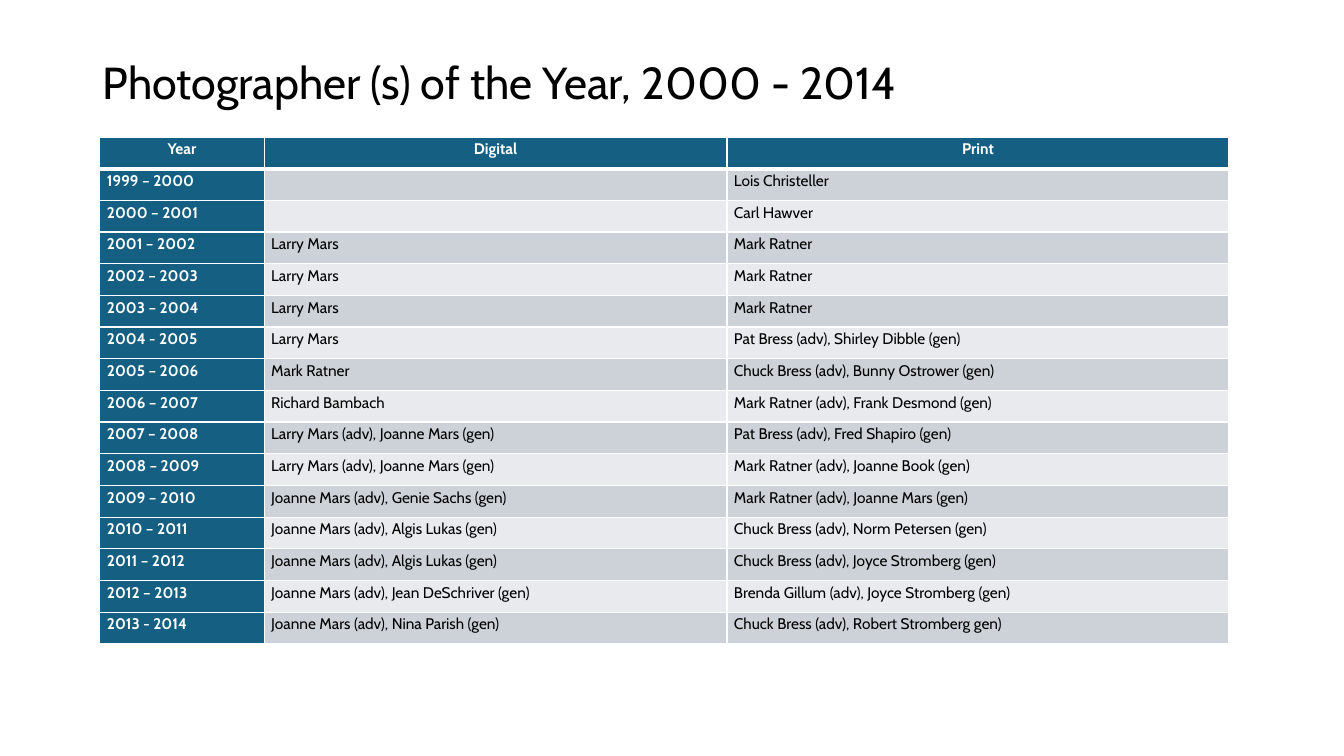
import pptx
import pptx.dml.color
import pptx.enum.text
import pptx.oxml.ns
import pptx.util
from lxml import etree

Inches = pptx.util.Inches
Pt = pptx.util.Pt
ALIGN = pptx.enum.text.PP_ALIGN
ANCHOR = pptx.enum.text.MSO_ANCHOR
qn = pptx.oxml.ns.qn

COLORS = {
    "text": "000000",
    "light": "FFFFFF",
    "header": "156082",
    "odd": "CCD2D8",
    "even": "E8EAED",
}

TITLE = "Photographer (s) of the Year, 2000 - 2014"
HEADINGS = ("Year", "Digital", "Print")
WINNERS = [
    ("1999 – 2000", "", "Lois Christeller"),
    ("2000 – 2001", "", "Carl Hawver"),
    ("2001 – 2002", "Larry Mars", "Mark Ratner"),
    ("2002 – 2003", "Larry Mars", "Mark Ratner"),
    ("2003 – 2004", "Larry Mars", "Mark Ratner"),
    ("2004 - 2005", "Larry Mars", "Pat Bress (adv), Shirley Dibble (gen)"),
    ("2005 – 2006", "Mark Ratner", "Chuck Bress (adv), Bunny Ostrower (gen)"),
    ("2006 – 2007", "Richard Bambach", "Mark Ratner (adv), Frank Desmond (gen)"),
    ("2007 – 2008", "Larry Mars (adv), Joanne Mars (gen)", "Pat Bress (adv), Fred Shapiro (gen)"),
    ("2008 – 2009", "Larry Mars (adv), Joanne Mars (gen)", "Mark Ratner (adv), Joanne Book (gen)"),
    ("2009 – 2010", "Joanne Mars (adv), Genie Sachs (gen)", "Mark Ratner (adv), Joanne Mars (gen)"),
    ("2010 – 2011", "Joanne Mars (adv), Algis Lukas (gen)", "Chuck Bress (adv), Norm Petersen (gen)"),
    ("2011 – 2012", "Joanne Mars (adv), Algis Lukas (gen)", "Chuck Bress (adv), Joyce Stromberg (gen)"),
    ("2012 – 2013", "Joanne Mars (adv), Jean DeSchriver (gen)", "Brenda Gillum (adv), Joyce Stromberg (gen)"),
    ("2013 - 2014", "Joanne Mars (adv), Nina Parish (gen)", "Chuck Bress (adv), Robert Stromberg gen)"),
]


def rgb(name):
    return pptx.dml.color.RGBColor.from_string(COLORS[name])


def write(tf, text, font="Cabin", size=11, color="text", bold=False,
          align=ALIGN.LEFT, spacing=1.0, after=0):
    """Fill the first paragraph of a text frame."""
    p = tf.paragraphs[0]
    p.alignment = align
    p.line_spacing = spacing
    p.space_after = Pt(after)
    if not text:
        # An empty paragraph still needs its size, or the row grows
        etree.SubElement(p._p, qn("a:endParaRPr"), sz=str(size * 100))
        return
    r = p.add_run()
    r.text = text
    r.font.name = font
    r.font.size = Pt(size)
    r.font.bold = bold
    r.font.color.rgb = rgb(color)


class Deck:
    """Holds the text style and the current slide."""

    def __init__(self, prs, font="Cabin"):
        self.font = font
        self.s = prs.slides.add_slide(prs.slide_layouts[6])

    def title(self, text, x, y, w, h):
        sp = self.s.shapes.add_textbox(Inches(x), Inches(y), Inches(w), Inches(h))
        tf = sp.text_frame
        tf.word_wrap = True
        tf.vertical_anchor = ANCHOR.MIDDLE
        write(tf, text, font=self.font, size=32, spacing=0.9)

    def border(self, cell, side, width):
        ln = etree.SubElement(cell._tc.get_or_add_tcPr(), qn(f"a:ln{side}"), w=str(Pt(width)))
        fill = etree.SubElement(ln, qn("a:solidFill"))
        etree.SubElement(fill, qn("a:srgbClr"), val=COLORS["light"])

    def cell(self, cell, text, row, col):
        header = row == 0
        strong = header or col == 0
        # Borders come before the fill; the line below the header is thicker
        for side in "LRTB":
            thick = (row, side) in ((0, "B"), (1, "T"))
            self.border(cell, side, 3 if thick else 1)
        cell.fill.solid()
        cell.fill.fore_color.rgb = rgb("header" if strong else "odd" if row % 2 else "even")
        cell.margin_left = cell.margin_right = Inches(0.07)
        cell.margin_top = cell.margin_bottom = 0
        write(cell.text_frame, text, font=self.font, bold=strong,
              color="light" if strong else "text",
              align=ALIGN.CENTER if header else ALIGN.LEFT,
              spacing=1.15, after=10)

    def table(self, rows, x, y, widths, h):
        frame = self.s.shapes.add_table(len(rows), len(widths), Inches(x), Inches(y),
                                        Inches(sum(widths)), Inches(h))
        table = frame.table
        table.horz_banding = False
        for column, width in zip(table.columns, widths):
            column.width = Inches(width)
        for i, values in enumerate(rows):
            for j, text in enumerate(values):
                self.cell(table.cell(i, j), text, i, j)


def main():
    prs = pptx.Presentation()
    prs.slide_width = Inches(13.33)
    prs.slide_height = Inches(7.5)
    deck = Deck(prs)

    # Title
    deck.title(TITLE, 0.92, 0.4, 11.5, 0.89)

    # Winners by year
    deck.table([HEADINGS] + WINNERS, 0.99, 1.36, (1.63, 4.59, 4.98), 5.03)

    prs.save("out.pptx")


if __name__ == "__main__":
    main()
